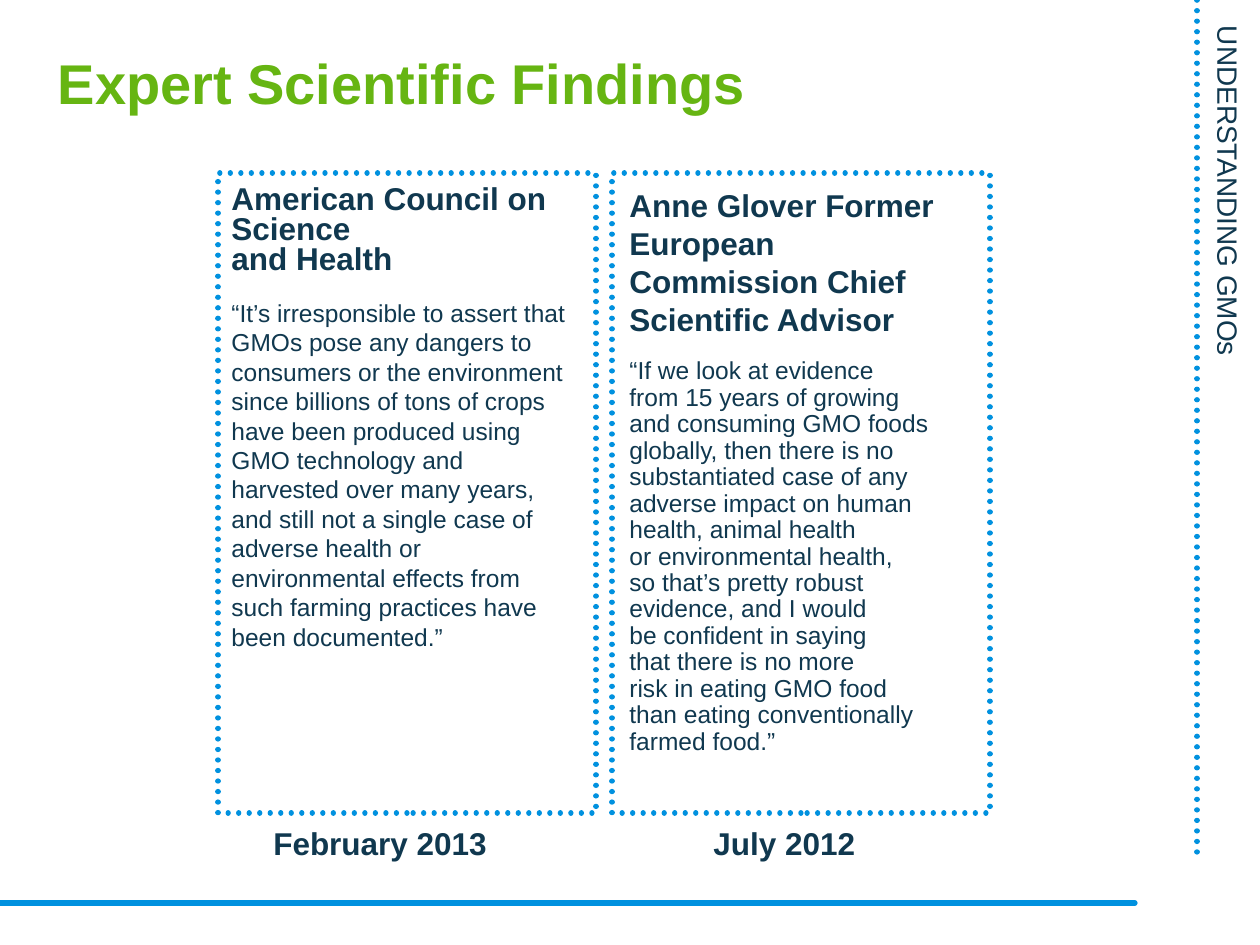
"""Build the slide of two expert findings on GMOs."""
from copy import deepcopy

from lxml.etree import SubElement
from pptx import Presentation
from pptx.dml.color import RGBColor
from pptx.enum.dml import MSO_LINE
from pptx.enum.shapes import MSO_CONNECTOR, MSO_SHAPE
from pptx.enum.text import MSO_ANCHOR, MSO_AUTO_SIZE as AUTO, PP_ALIGN
from pptx.oxml.ns import qn
from pptx.util import Emu, Pt

COLORS = {"blue": "0091DF", "green": "66B512", "navy": "10384F"}
FONT = "Arial"

COUNCIL = "American Council on Science \nand Health"
COUNCIL_QUOTE = (
    "“It’s irresponsible to assert that GMOs pose any dangers to consumers or the "
    "environment since billions of tons of crops have been produced using GMO technology "
    "and harvested over many years, and still not a single case of adverse health or "
    "environmental effects from such farming practices have been documented.”"
)
ADVISOR = "Anne Glover Former European Commission Chief Scientific Advisor"
ADVISOR_QUOTE = (
    "“If we look at evidence \nfrom 15 years of growing \nand consuming GMO foods globally, "
    "then there is no substantiated case of any adverse impact on human health, animal health "
    "\nor environmental health, \nso that’s pretty robust evidence, and I would "
    "\nbe confident in saying \nthat there is no more \nrisk in eating GMO food "
    "\nthan eating conventionally farmed food.”"
)


def px(length):
    """Turn px into EMU at 126 px to the inch."""
    return Emu(round(length * 914400 / 126))


def rgb(name):
    """Look up a named colour."""
    return RGBColor.from_string(COLORS[name])


def style_line(line, dotted):
    """Give a line the blue round-capped stroke."""
    line.color.rgb = rgb("blue")
    line.width = Pt(3)
    if dotted:
        line.dash_style = MSO_LINE.ROUND_DOT
    line._get_or_add_ln().set("cap", "rnd")


def add_rule(slide, start, end, dotted=False):
    """Draw a straight rule between two points."""
    rule = slide.shapes.add_connector(MSO_CONNECTOR.STRAIGHT, *map(px, start + end))
    style_line(rule.line, dotted)
    SubElement(rule._element.spPr, qn("a:effectLst"))


def add_frame(slide, *box):
    """Draw an unfilled dotted frame."""
    frame = slide.shapes.add_shape(MSO_SHAPE.RECTANGLE, *map(px, box))
    frame.shadow.inherit = False
    frame.fill.background()
    style_line(frame.line, True)


def add_box(slide, box, wrap=True, grow=True):
    """Add an empty text box."""
    holder = slide.shapes.add_textbox(*map(px, box))
    holder.text_frame.word_wrap = wrap
    holder.text_frame.auto_size = AUTO.SHAPE_TO_FIT_TEXT if grow else AUTO.NONE
    return holder


def write(paragraph, text, size, bold=False, color="navy", spacing=None):
    """Fill a paragraph and format its runs and line breaks alike."""
    paragraph.text = text
    paragraph.line_spacing = spacing
    for run in paragraph.runs:
        run.font.name = FONT
        run.font.size = Pt(size)
        run.font.bold = bold
        run.font.color.rgb = rgb(color)
    for line_break in paragraph._p.findall(qn("a:br")):
        line_break.append(deepcopy(paragraph.runs[0]._r.rPr))


def add_finding(slide, box, source, quote, source_spacing=None, quote_spacing=None):
    """Add a source heading with its quotation."""
    frame = add_box(slide, box).text_frame
    write(frame.paragraphs[0], source, 18, True, spacing=source_spacing)
    quotation = frame.add_paragraph()
    write(quotation, quote, 14, spacing=quote_spacing)
    quotation.space_before = Pt(12)
    quotation.space_after = Pt(6)


def add_date(slide, box, date):
    """Add a date label below a frame."""
    label = add_box(slide, box, wrap=False)
    write(label.text_frame.paragraphs[0], date, 18, True)


def add_title(slide, box, text):
    """Add the centred slide title."""
    frame = add_box(slide, box, grow=False).text_frame
    frame.vertical_anchor = MSO_ANCHOR.MIDDLE
    write(frame.paragraphs[0], text, 32, True, "green")
    frame.paragraphs[0].alignment = PP_ALIGN.CENTER


def add_side_label(slide, box, text):
    """Add the section label that reads downwards."""
    label = add_box(slide, box)
    label.rotation = 90
    write(label.text_frame.paragraphs[0], text, 16)


def main():
    """Build and save the slide."""
    deck = Presentation()
    deck.slide_width, deck.slide_height = px(1260), px(945)
    slide = deck.slides.add_slide(deck.slide_layouts[6])

    add_rule(slide, (1197, 852), (1197, 0), dotted=True)
    add_rule(slide, (1135, 903), (0, 903))
    add_side_label(slide, (955, 263, 546, 47), "UNDERSTANDING GMOs")
    add_title(slide, (-149, 33, 1102, 98), "Expert Scientific Findings")

    for column in range(2):
        add_frame(slide, 218 + 394 * column, 173, 378, 640)
    add_finding(slide, (219, 180, 369, 517), COUNCIL, COUNCIL_QUOTE, source_spacing=0.8)
    add_finding(slide, (617, 180, 362, 587), ADVISOR, ADVISOR_QUOTE, quote_spacing=0.9)
    add_date(slide, (261, 818, 241, 50), "February 2013")
    add_date(slide, (701, 818, 169, 50), "July 2012")

    deck.save("out.pptx")


if __name__ == "__main__":
    main()
